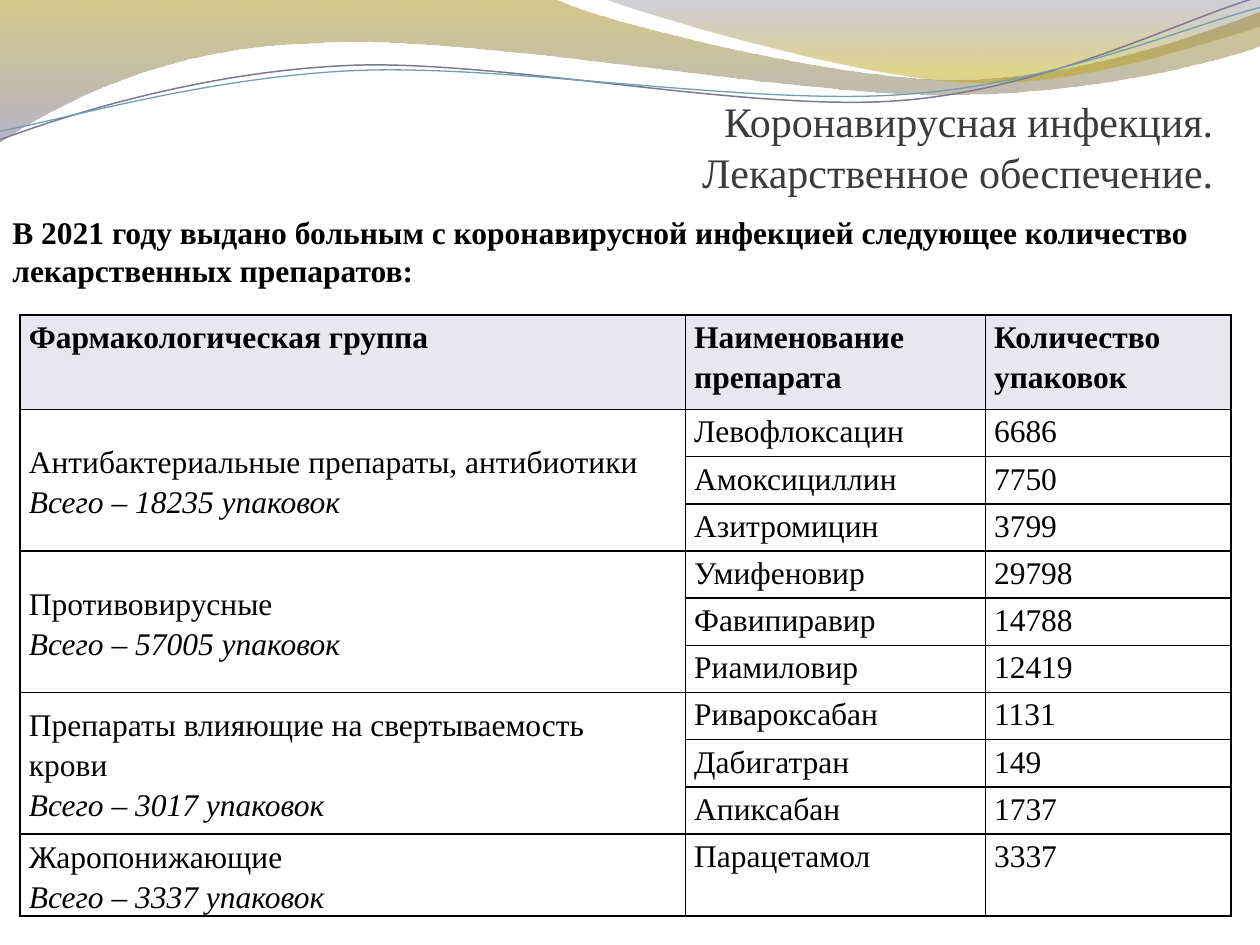
from itertools import chain

from lxml.etree import SubElement
from pptx import Presentation
from pptx.dml.color import RGBColor
from pptx.enum.text import MSO_ANCHOR, MSO_AUTO_SIZE, PP_ALIGN
from pptx.oxml import parse_xml
from pptx.oxml.ns import nsdecls, qn
from pptx.util import Inches, Pt

THEME = {
    "font": "Times New Roman",
    "title_size": 24, "body_size": 18,
    "title": "3B3B3B", "text": "000000", "border": "000000", "header": "E8E7ED",
}

# Each wave: start point, segments (one point: line, three points: Bézier curve),
# gradient stops (position, colour, opacity in %) or line (colour, width).
WAVES = [
    {"start": (0, 0),
     "segments": [[(4.4, -0.01)],
                  [(4.76, 0.17), (6.64, 0.63), (7.58, 0.63)],
                  [(8.53, 0.63), (9.58, 0.26), (10, 0.09)],
                  [(10.01, 0.36)],
                  [(9.83, 0.44), (8.7, 0.76), (7.46, 0.75)],
                  [(6.22, 0.75), (3.82, 0.28), (2.57, 0.34)],
                  [(1.29, 0.36), (0.46, 0.83), (-0.01, 1.13)]],
     "gradient": [(0, "9E8700", 45), (1, "7B769C", 55)]},
    {"start": (4.79, -0.01),
     "segments": [[(5.09, 0.11), (6.82, 0.62), (7.69, 0.65)],
                  [(8.56, 0.69), (9.61, 0.32), (10, 0.21)],
                  [(10, 0)]],
     "gradient": [(0, "66627C", 30), (0.8, "BDA100", 45)]},
    {"start": (0, 1.11),
     "segments": [[(0.48, 0.93), (1.58, 0.57), (2.77, 0.52)],
                  [(3.95, 0.47), (5.93, 0.89), (7.13, 0.8)],
                  [(8.33, 0.71), (9.38, 0.15), (9.98, -0.02)]],
     "line": ("7C7991", 0.85)},
    {"start": (0, 1.04),
     "segments": [[(0.47, 0.96), (1.64, 0.61), (2.83, 0.56)],
                  [(4.03, 0.51), (5.97, 0.84), (7.17, 0.75)],
                  [(8.36, 0.67), (9.41, 0.21), (10, 0.06)]],
     "line": ("6EA0B0", 0.75)},
]

HEADERS = ["Фармакологическая группа", "Наименование препарата", "Количество упаковок"]
GROUPS = [
    ("Антибактериальные препараты, антибиотики", 18235,
     [("Левофлоксацин", 6686), ("Амоксициллин", 7750), ("Азитромицин", 3799)]),
    ("Противовирусные", 57005,
     [("Умифеновир", 29798), ("Фавипиравир", 14788), ("Риамиловир", 12419)]),
    ("Препараты влияющие на свертываемость крови", 3017,
     [("Ривароксабан", 1131), ("Дабигатран", 149), ("Апиксабан", 1737)]),
    ("Жаропонижающие", 3337, [("Парацетамол", 3337)]),
]


def add_curved_shape(shapes, start, segments, close):
    """Build a freeform through all points, then turn each point triple into a Bézier curve."""
    points = [(x * 100, y * 100) for x, y in chain([start], *segments)]
    builder = shapes.build_freeform(*points[0], scale=Inches(0.01))
    builder.add_line_segments(points[1:], close=close)
    shape = builder.convert_to_shape()
    lines = iter(list(shape._element.iter(qn("a:lnTo"))))
    for segment in segments:
        segment_lines = [next(lines) for _ in segment]
        if len(segment) == 3:
            curve = parse_xml(f'<a:cubicBezTo {nsdecls("a")}/>')
            segment_lines[0].addprevious(curve)
            for line in segment_lines:
                curve.append(line[0])
                line.getparent().remove(line)
    return shape


def format_text(paragraph, size, color, bold=False, italic=False):
    for run in paragraph.runs:
        run.font.name = THEME["font"]
        run.font.size = Pt(size)
        run.font.color.rgb = RGBColor.from_string(color)
        run.font.bold = bold
        run.font.italic = italic


presentation = Presentation()
presentation.slide_width, presentation.slide_height = Inches(10), Inches(7.5)
slide = presentation.slides.add_slide(presentation.slide_layouts[5])

# Waves along the top edge
for wave in WAVES:
    shape = add_curved_shape(slide.shapes, wave["start"], wave["segments"], "gradient" in wave)
    shape.shadow.inherit = False
    if "gradient" in wave:
        shape.line.fill.background()
        shape.fill.gradient()
        shape.fill.gradient_angle = 270
        for stop, (position, color, opacity) in zip(shape.fill.gradient_stops, wave["gradient"]):
            stop.position = position
            stop.color.rgb = RGBColor.from_string(color)
        color_elements = shape._element.spPr.iter(qn("a:srgbClr"))
        for element, (position, color, opacity) in zip(color_elements, wave["gradient"]):
            SubElement(element, qn("a:alpha")).set("val", str(opacity * 1000))
    else:
        color, width = wave["line"]
        shape.fill.background()
        shape.line.color.rgb = RGBColor.from_string(color)
        shape.line.width = Pt(width)

# Title, brought in front of the waves
title = slide.shapes.title
title.left, title.top, title.width, title.height = (
    Inches(0.55), Inches(0.31), Inches(9.08), Inches(1.25))
slide.shapes._spTree.append(title._element)
frame = title.text_frame
frame.text = "Коронавирусная инфекция.\nЛекарственное обеспечение."
frame.auto_size = MSO_AUTO_SIZE.NONE
frame.vertical_anchor = MSO_ANCHOR.BOTTOM
frame.margin_left = frame.margin_right = frame.margin_bottom = 0
for paragraph in frame.paragraphs:
    paragraph.alignment = PP_ALIGN.RIGHT
    format_text(paragraph, THEME["title_size"], THEME["title"])

# Table of medicines
row_count = 1 + sum(len(medicines) for _, _, medicines in GROUPS)
table_height, header_height, last_height = Inches(4.77), Inches(0.75), Inches(0.65)
table = slide.shapes.add_table(row_count, len(HEADERS), Inches(0.16), Inches(2.5),
                               Inches(9.61), table_height).table
table.first_row = table.horz_banding = False
for column, width in zip(table.columns, (5.28, 2.38, 1.95)):
    column.width = Inches(width)
for row in table.rows:
    row.height = int((table_height - header_height - last_height) / (row_count - 2))
table.rows[0].height = header_height
table.rows[row_count - 1].height = last_height

for column, header in enumerate(HEADERS):
    table.cell(0, column).text = header
group_rows = []
row = 1
for group, total, medicines in GROUPS:
    group_rows.append(row)
    group_cell = table.cell(row, 0)
    if len(medicines) > 1:
        group_cell.merge(table.cell(row + len(medicines) - 1, 0))
    group_cell.text = f"{group}\nВсего – {total} упаковок"
    for medicine, packs in medicines:
        table.cell(row, 1).text = medicine
        table.cell(row, 2).text = str(packs)
        row += 1

for row in range(row_count):
    for column in range(len(HEADERS)):
        cell = table.cell(row, column)
        is_group = column == 0 and row in group_rows
        cell.margin_left = Inches(0.07)
        cell.margin_right = Inches(0.15 if is_group else 0.07)
        cell.margin_top = cell.margin_bottom = 0
        cell.vertical_anchor = MSO_ANCHOR.MIDDLE if is_group else MSO_ANCHOR.TOP
        for index, paragraph in enumerate(cell.text_frame.paragraphs):
            paragraph.alignment = PP_ALIGN.LEFT if is_group else PP_ALIGN.JUSTIFY
            paragraph.line_spacing = 1.15
            format_text(paragraph, THEME["body_size"], THEME["text"],
                        bold=row == 0, italic=index == 1)
        for side in ("lnL", "lnR", "lnT", "lnB"):
            cell._tc.get_or_add_tcPr().append(parse_xml(
                f'<a:{side} {nsdecls("a")} w="{Pt(1)}"><a:solidFill>'
                f'<a:srgbClr val="{THEME["border"]}"/></a:solidFill></a:{side}>'))
        if row == 0:
            cell.fill.solid()
            cell.fill.fore_color.rgb = RGBColor.from_string(THEME["header"])
        else:
            cell.fill.background()

# Introduction above the table
introduction = slide.shapes.add_textbox(0, Inches(1.64), Inches(10), Inches(0.71))
frame = introduction.text_frame
frame.word_wrap = True
frame.auto_size = MSO_AUTO_SIZE.SHAPE_TO_FIT_TEXT
frame.text = ("В 2021 году выдано больным с коронавирусной инфекцией "
              "следующее количество лекарственных препаратов:")
format_text(frame.paragraphs[0], THEME["body_size"], THEME["text"], bold=True)

presentation.save("out.pptx")
